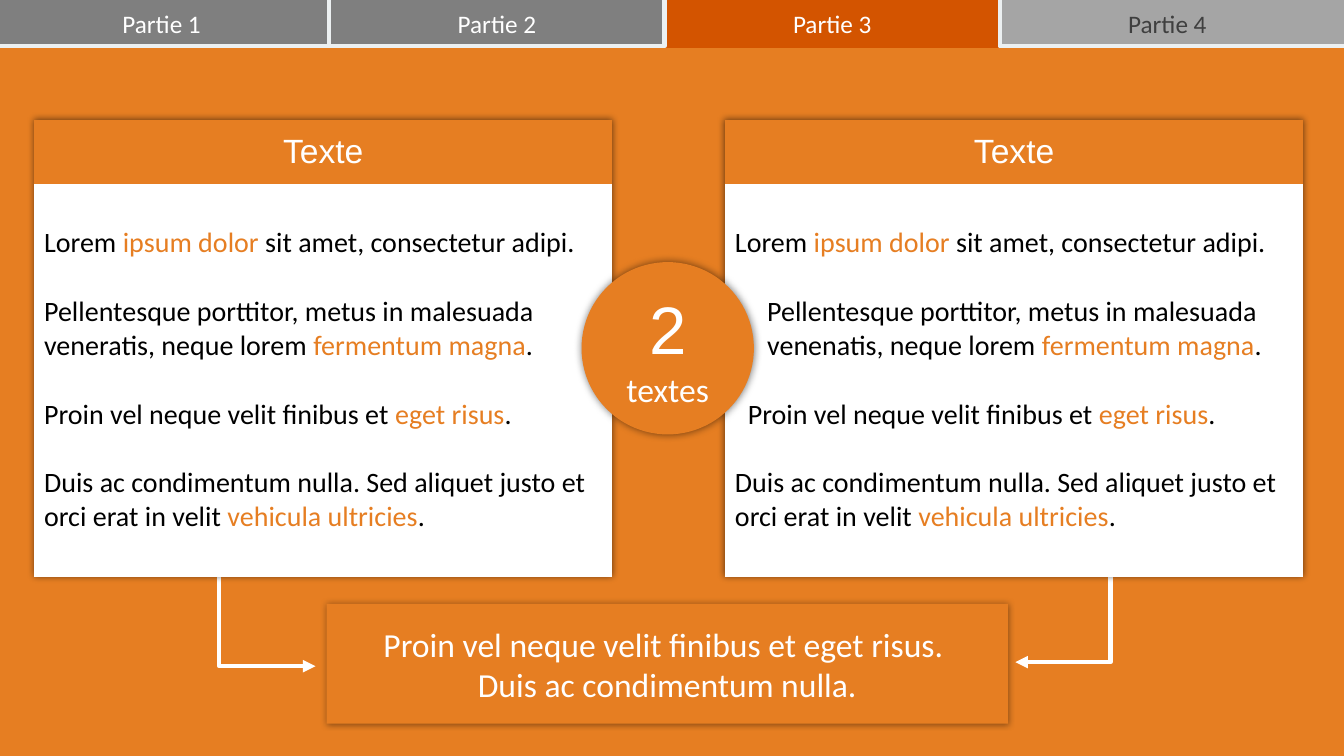
"""Build a slide with two text cards that lead to one conclusion."""
from lxml.etree import SubElement
from pptx import Presentation
from pptx.dml.color import RGBColor
from pptx.enum.shapes import MSO_CONNECTOR, MSO_SHAPE
from pptx.enum.text import MSO_ANCHOR, PP_ALIGN
from pptx.oxml.ns import qn
from pptx.util import Pt

ORANGE, WHITE, BLACK = "E67E22", "FFFFFF", "000000"
PLAIN = "{2D5ABB26-0587-4C30-8999-92F81FD0307C}"

TABS = [
    ("Partie 1", "7F7F7F", "ECF0F1", WHITE),
    ("Partie 2", "7F7F7F", "ECF0F1", WHITE),
    ("Partie 3", "D35400", "D35400", WHITE),
    ("Partie 4", "A5A5A5", "ECF0F1", "3F3F3F"),
]
ACTIVE = 2
FIRST = "Lorem |ipsum dolor |sit amet, consectetur adipi."
THIRD = "Proin vel neque velit finibus et |eget risus|."
LAST = ("Duis ac condimentum nulla. Sed aliquet justo et orci erat "
        "in velit |vehicula ultricies|.")
SECOND = ("Pellentesque porttitor, metus in malesuada {}, "
          "neque lorem |fermentum magna|.")
CARDS = [
    (24.3, "Texte", [(FIRST, 0), (SECOND.format("veneratis"), 0),
                     (THIRD, 0), (LAST, 0)]),
    (517.8, "Texte", [(FIRST, 0), (SECOND.format("venenatis"), 23),
                      (THIRD, 9.2), (LAST, 0)]),
]
BADGE = [("2", 48, "Arial"), ("textes", 24, "Calibri")]
RESULT = [("Proin vel neque velit finibus et eget risus. ", 24, "Calibri"),
          ("Duis ac condimentum nulla.", 24, "Calibri")]
ARROWS = [((38.9, 392.4), (225.4, 475.9), 63100),
          ((861.1, 389.5), (725.3, 473), 50000)]


def paint(fill, tone):
    fill.solid()
    fill.fore_color.rgb = RGBColor.from_string(tone)


def style(run, size, face, tone):
    run.font.size = Pt(size)
    run.font.name = face
    run.font.color.rgb = RGBColor.from_string(tone)


def shade(effects, blur, alpha):
    cast = SubElement(effects, qn("a:outerShdw"), blurRad=str(Pt(blur)),
                      dist="0", dir="0", algn="ctr", rotWithShape="0")
    tone = SubElement(cast, qn("a:srgbClr"), val=BLACK)
    SubElement(tone, qn("a:alpha"), val=str(alpha * 1000))


def write(frame, lines, tone):
    frame.text = "\n".join(text for text, _, _ in lines)
    for para, (_, size, face) in zip(frame.paragraphs, lines):
        para.alignment = PP_ALIGN.CENTER
        for run in para.runs:
            style(run, size, face, tone)


def add_block(slide, kind, box, fill, lines, tone=WHITE, edge=None):
    shape = slide.shapes.add_shape(kind, *map(Pt, box))
    shape.shadow.inherit = False
    paint(shape.fill, fill)
    if edge:
        paint(shape.line.fill, edge)
        shape.line.width = Pt(3)
    else:
        shape.line.fill.background()
    frame = shape.text_frame
    frame.vertical_anchor = MSO_ANCHOR.MIDDLE
    write(frame, lines, tone)
    return shape


def add_arrow(slide, start, end, bend):
    link = slide.shapes.add_connector(
        MSO_CONNECTOR.ELBOW, *map(Pt, start + end))
    paint(link.line.fill, WHITE)
    link.line.width = Pt(3)
    props = link.element.spPr
    SubElement(props.find(qn("a:ln")), qn("a:tailEnd"), type="triangle")
    SubElement(props, qn("a:effectLst"))
    guides = props.find(qn("a:prstGeom")).find(qn("a:avLst"))
    SubElement(guides, qn("a:gd"), name="adj1", fmla=f"val {bend}")


def add_card(slide, left, title, paras):
    frame = slide.shapes.add_table(
        2, 1, Pt(left), Pt(85.7), Pt(413.2), Pt(326.4))
    table = frame.table
    table.first_row = table.horz_banding = False
    props = frame.element.find(".//" + qn("a:tblPr"))
    props.find(qn("a:tableStyleId")).text = PLAIN
    effects = SubElement(props, qn("a:effectLst"))
    props.insert(0, effects)
    shade(effects, 5, 53)
    head, body = table.cell(0, 0), table.cell(1, 0)
    for row, cell, high, fill in zip(
            table.rows, (head, body), (45.5, 280.9), (ORANGE, WHITE)):
        row.height = Pt(high)
        cell.vertical_anchor = MSO_ANCHOR.MIDDLE
        paint(cell.fill, fill)
    write(head.text_frame, [(title, 24, "Arial")], WHITE)
    text = body.text_frame
    for i, (line, indent) in enumerate(paras):
        para = text.add_paragraph() if i else text.paragraphs[0]
        if i:
            para.space_before = Pt(24.4)
        if indent:
            para._p.get_or_add_pPr().set("marL", str(Pt(indent)))
        for j, part in enumerate(line.split("|")):
            run = para.add_run()
            run.text = part
            style(run, 20, "Calibri", ORANGE if j % 2 else BLACK)


def add_tabs(slide):
    pitch, left = 239.5, -4.3
    for i in sorted(range(len(TABS)), key=lambda n: n != ACTIVE):
        text, fill, edge, tone = TABS[i]
        extra = 10 if i == len(TABS) - 1 else 0
        box = (left + i * pitch, -3.6, pitch + extra, 36.7)
        tab = add_block(slide, MSO_SHAPE.RECTANGLE, box, fill,
                        [(text, 18, "Calibri")], tone, edge)
        frame = tab.text_frame
        frame.margin_top, frame.margin_bottom = Pt(3.6), 0
        frame.margin_right = Pt(7.2 + extra)


def main():
    deck = Presentation()
    deck.slide_width, deck.slide_height = Pt(960), Pt(540)
    slide = deck.slides.add_slide(deck.slide_layouts[6])
    paint(slide.background.fill, ORANGE)
    for arrow in ARROWS:
        add_arrow(slide, *arrow)
    for card in CARDS:
        add_card(slide, *card)
    add_tabs(slide)
    badge = add_block(slide, MSO_SHAPE.OVAL, (415.4, 187.2, 123.1, 123.1),
                      ORANGE, BADGE)
    badge.text_frame.word_wrap = False
    result = add_block(slide, MSO_SHAPE.RECTANGLE,
                       (233.3, 431.3, 486.7, 85.7), ORANGE, RESULT)
    for shape, blur, alpha in ((badge, 6, 53), (result, 5, 40)):
        shade(shape.element.spPr.find(qn("a:effectLst")), blur, alpha)
    deck.save("out.pptx")


if __name__ == "__main__":
    main()
